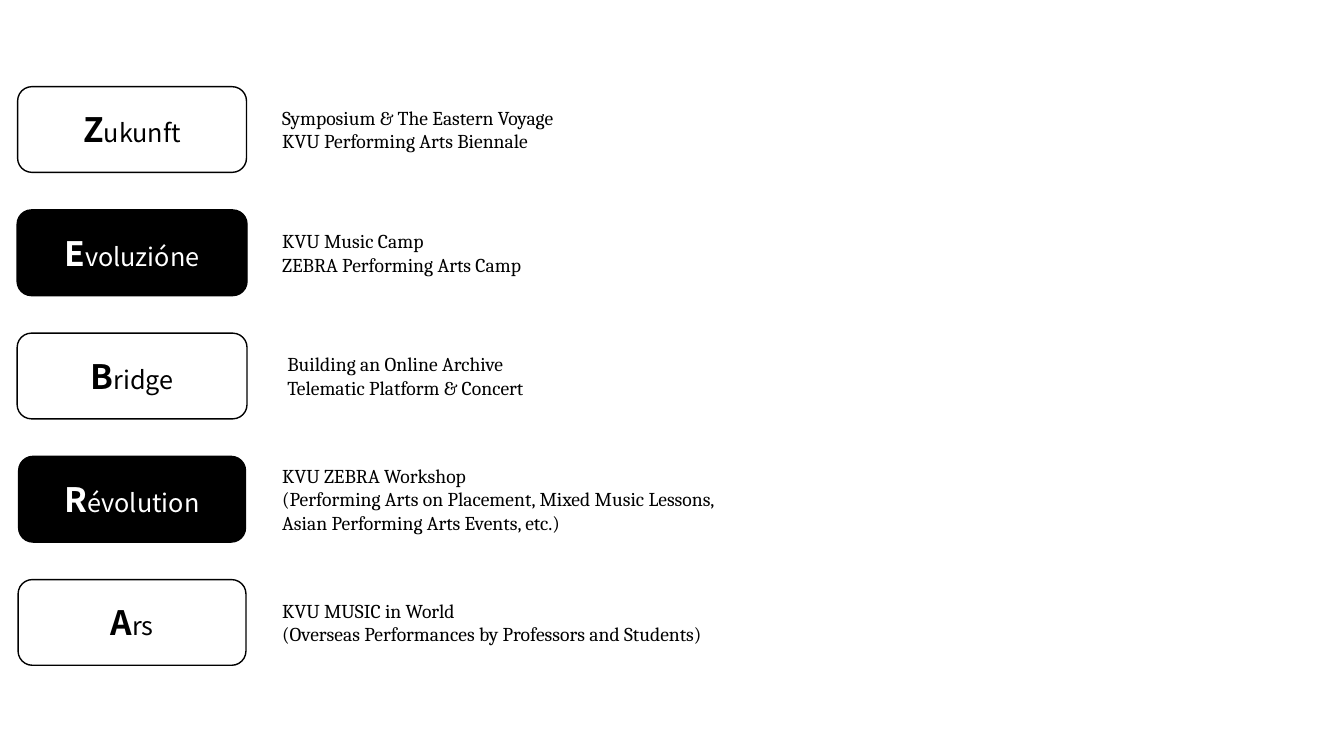
from dataclasses import dataclass

from pptx import Presentation
from pptx.dml.color import RGBColor
from pptx.enum.shapes import MSO_SHAPE
from pptx.enum.text import MSO_ANCHOR, PP_ALIGN
from pptx.util import Inches, Pt


@dataclass(frozen=True)
class Theme:
    black: RGBColor = RGBColor(0, 0, 0)
    white: RGBColor = RGBColor(255, 255, 255)
    label_font: str = "Noto Sans CJK KR"
    body_font: str = "Cambria"
    initial_size: int = 24
    label_size: int = 18
    body_size: int = 14
    line_height: float = 0.235


LABEL_CENTER = 1.31
LABEL_HEIGHT = 0.85
FIRST_TOP, LAST_TOP = 0.86, 5.75
PROGRAM_LEFT = 2.7
INSET = 0.1

# initial, rest of the word, label width, programs, program width, lines, left inset
ROWS = [
    ("Z", "ukunft", 2.27,
     ["Symposium & The Eastern Voyage", "KVU Performing Arts Biennale"],
     3.82, 2, INSET),
    ("E", "voluzióne", 2.28,
     ["KVU Music Camp", "ZEBRA Performing Arts Camp"],
     4.41, 2, INSET),
    ("B", "ridge", 2.28,
     ["Building an Online Archive", "Telematic Platform & Concert"],
     4.41, 2, 0.15),
    ("R", "évolution", 2.25,
     ["KVU ZEBRA Workshop",
      "(Performing Arts on Placement, Mixed Music Lessons, "
      "Asian Performing Arts Events, etc.)"],
     4.51, 3, INSET),
    ("A", "rs", 2.26,
     ["KVU MUSIC in World",
      "(Overseas Performances by Professors and Students)"],
     4.41, 2, INSET),
]


def add_text(paragraph, text, *, font, size, color, bold=False):
    run = paragraph.add_run()
    run.text = text
    run.font.name = font
    run.font.size = Pt(size)
    run.font.color.rgb = color
    run.font.bold = bold


class SlideBuilder:
    def __init__(self, slide, theme):
        self.slide = slide
        self.theme = theme

    def label(self, initial, rest, top, width, filled):
        """Draw a rounded box whose word starts with a large bold initial."""
        theme = self.theme
        box = self.slide.shapes.add_shape(
            MSO_SHAPE.ROUNDED_RECTANGLE, Inches(LABEL_CENTER - width / 2),
            Inches(top), Inches(width), Inches(LABEL_HEIGHT))
        box.shadow.inherit = False
        if filled:
            box.fill.solid()
            box.fill.fore_color.rgb = theme.black
        else:
            box.fill.background()
        box.line.color.rgb = theme.black
        box.line.width = Pt(1)
        box.text_frame.vertical_anchor = MSO_ANCHOR.MIDDLE
        word = box.text_frame.paragraphs[0]
        word.alignment = PP_ALIGN.CENTER
        color = theme.white if filled else theme.black
        add_text(word, initial, font=theme.label_font,
                 size=theme.initial_size, color=color, bold=True)
        add_text(word, rest, font=theme.label_font,
                 size=theme.label_size, color=color)

    def programs(self, entries, middle, width, lines, inset):
        """Write the entries, one a paragraph, centred on the height middle."""
        theme = self.theme
        height = 0.1 + lines * theme.line_height
        box = self.slide.shapes.add_textbox(
            Inches(PROGRAM_LEFT), Inches(middle - height / 2),
            Inches(width), Inches(height))
        frame = box.text_frame
        frame.word_wrap = True
        frame.margin_left = Inches(inset)
        for index, entry in enumerate(entries):
            paragraph = frame.add_paragraph() if index else frame.paragraphs[0]
            add_text(paragraph, entry, font=theme.body_font,
                     size=theme.body_size, color=theme.black)


def main():
    presentation = Presentation()
    presentation.slide_width = Inches(13.33)
    presentation.slide_height = Inches(7.5)
    slide = presentation.slides.add_slide(presentation.slide_layouts[6])
    builder = SlideBuilder(slide, Theme())

    pitch = (LAST_TOP - FIRST_TOP) / (len(ROWS) - 1)
    for index, row in enumerate(ROWS):
        initial, rest, label_width, entries, program_width, lines, inset = row
        top = FIRST_TOP + index * pitch
        builder.label(initial, rest, top, label_width, filled=index % 2 == 1)
        builder.programs(entries, top + LABEL_HEIGHT / 2, program_width, lines, inset)

    presentation.save("out.pptx")


if __name__ == "__main__":
    main()
